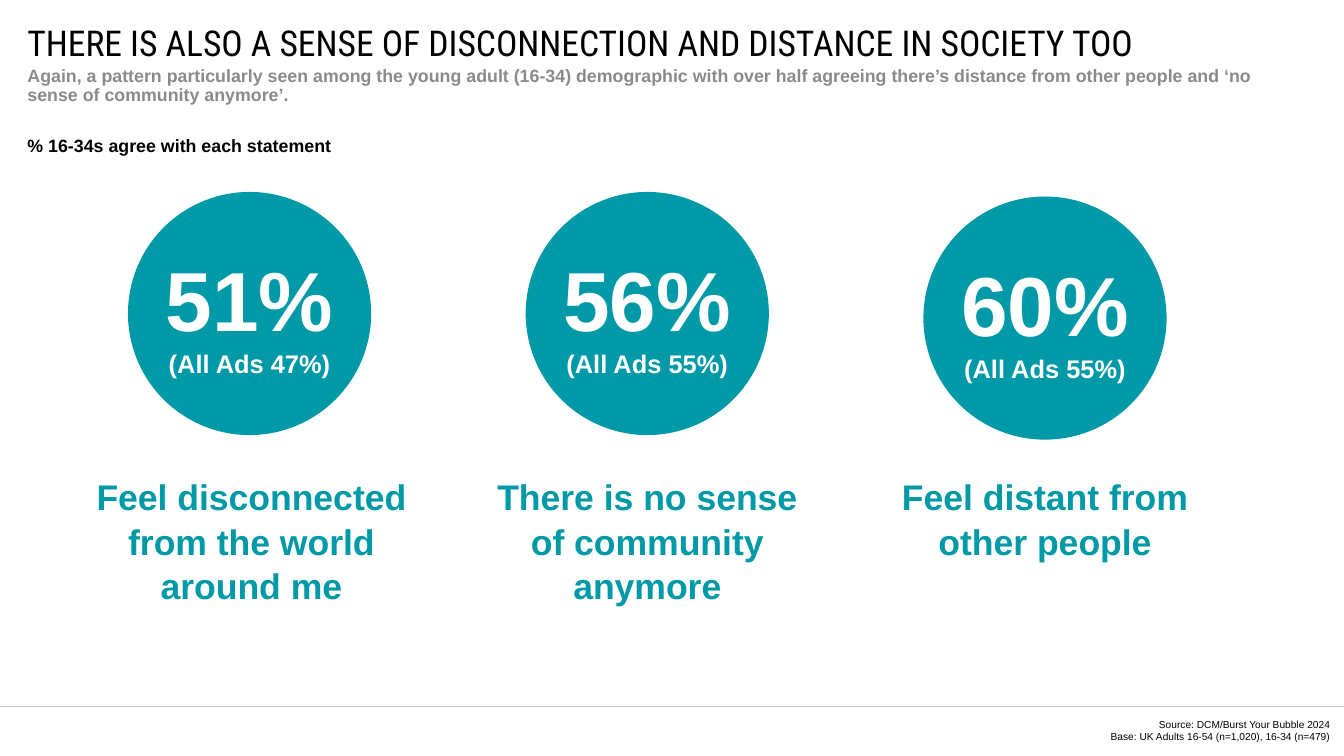
from dataclasses import dataclass

from pptx import Presentation
from pptx.dml.color import RGBColor
from pptx.enum.shapes import MSO_CONNECTOR, MSO_SHAPE
from pptx.enum.text import MSO_ANCHOR, PP_ALIGN
from pptx.oxml.ns import qn
from pptx.util import Inches, Pt
from lxml import etree


@dataclass(frozen=True)
class Theme:
    heading_font: str = "Roboto Condensed"
    body_font: str = "Arial"
    black: str = "000000"
    white: str = "FFFFFF"
    gray: str = "8A8A8D"
    rule: str = "CAC8C8"
    teal: str = "0099A8"
    title_size: int = 28
    body_size: int = 14
    caption_size: int = 28
    percent_size: int = 66
    comparison_size: int = 20
    source_size: int = 8


THEME = Theme()
SLIDE_WIDTH, SLIDE_HEIGHT = 14.7, 8.27
COLUMN_STEP = 4.35
CIRCLE_LEFT, CIRCLE_SIZE = 1.4, 2.66
CAPTION_LEFT, CAPTION_TOP, CAPTION_WIDTH = 0.88, 5.13, 3.74
STATEMENTS = [
    ("51%", "(All Ads 47%)", "Feel disconnected from the world around me", 2.1, 1.99),
    ("56%", "(All Ads 55%)", "There is no sense of community anymore", 2.1, 1.99),
    ("60%", "(All Ads 55%)", "Feel distant from other people", 2.15, 1.51),
]


def style_paragraph(paragraph, size, color, bold=False, font=THEME.body_font,
                    alignment=PP_ALIGN.LEFT, line_spacing=None):
    paragraph.alignment = alignment
    paragraph.line_spacing = line_spacing
    for run in paragraph.runs:
        run.font.name = font
        run.font.size = Pt(size)
        run.font.bold = bold
        run.font.color.rgb = RGBColor.from_string(color)


def remove_margins(text_frame):
    text_frame.margin_left = text_frame.margin_right = 0
    text_frame.margin_top = text_frame.margin_bottom = 0


def add_text(slide, box, text, size, color, anchor=MSO_ANCHOR.TOP,
             margins=False, **style):
    shape = slide.shapes.add_textbox(*[Inches(length) for length in box])
    text_frame = shape.text_frame
    text_frame.word_wrap = True
    text_frame.vertical_anchor = anchor
    if not margins:
        remove_margins(text_frame)
    text_frame.text = text
    for paragraph in text_frame.paragraphs:
        style_paragraph(paragraph, size, color, **style)


def add_footer_rule(slide):
    top = Inches(7.73)
    connector = slide.shapes.add_connector(
        MSO_CONNECTOR.STRAIGHT, 0, top, Inches(SLIDE_WIDTH), top)
    connector.line.color.rgb = RGBColor.from_string(THEME.rule)
    connector.line.width = Pt(0.5)
    etree.SubElement(connector._element.spPr, qn("a:effectLst"))


def add_circle(slide, left, top, percent, comparison):
    shape = slide.shapes.add_shape(
        MSO_SHAPE.OVAL, Inches(left), Inches(top),
        Inches(CIRCLE_SIZE), Inches(CIRCLE_SIZE))
    shape.shadow.inherit = False
    shape.fill.solid()
    shape.fill.fore_color.rgb = RGBColor.from_string(THEME.teal)
    shape.line.fill.background()
    text_frame = shape.text_frame
    text_frame.word_wrap = True
    text_frame.vertical_anchor = MSO_ANCHOR.MIDDLE
    remove_margins(text_frame)
    text_frame.text = f"{percent}\n{comparison}"
    sizes = (THEME.percent_size, THEME.comparison_size)
    for paragraph, size in zip(text_frame.paragraphs, sizes):
        style_paragraph(paragraph, size, THEME.white, bold=True,
                        alignment=PP_ALIGN.CENTER)


def main():
    presentation = Presentation()
    presentation.slide_width = Inches(SLIDE_WIDTH)
    presentation.slide_height = Inches(SLIDE_HEIGHT)
    slide = presentation.slides.add_slide(presentation.slide_layouts[6])

    add_footer_rule(slide)
    add_text(slide, (0.3, 0.3, 13.58, 0.32),
             "THERE IS ALSO A SENSE OF DISCONNECTION AND DISTANCE IN SOCIETY TOO",
             THEME.title_size, THEME.black, anchor=MSO_ANCHOR.MIDDLE,
             font=THEME.heading_font)
    add_text(slide, (0.3, 0.73, 13.59, 0.48),
             "Again, a pattern particularly seen among the young adult (16-34) "
             "demographic with over half agreeing there’s distance from other "
             "people and ‘no sense of community anymore’.",
             THEME.body_size, THEME.gray, bold=True, line_spacing=Pt(15))
    add_text(slide, (0.3, 1.5, 9.03, 0.23), "% 16-34s agree with each statement",
             THEME.body_size, THEME.black, bold=True, line_spacing=Pt(15))
    add_text(slide, (11.14, 7.86, 3.41, 0.27),
             "Source: DCM/Burst Your Bubble 2024\n"
             "Base: UK Adults 16-54 (n=1,020), 16-34 (n=479)",
             THEME.source_size, THEME.black, anchor=MSO_ANCHOR.MIDDLE,
             alignment=PP_ALIGN.RIGHT)

    for column, (percent, comparison, caption, top, height) in enumerate(STATEMENTS):
        offset = column * COLUMN_STEP
        add_circle(slide, CIRCLE_LEFT + offset, top, percent, comparison)
        add_text(slide, (CAPTION_LEFT + offset - 0.02 * (column > 0), CAPTION_TOP,
                         CAPTION_WIDTH, height),
                 caption, THEME.caption_size, THEME.teal, margins=True, bold=True,
                 alignment=PP_ALIGN.CENTER, line_spacing=1.04)

    presentation.save("out.pptx")


if __name__ == "__main__":
    main()
